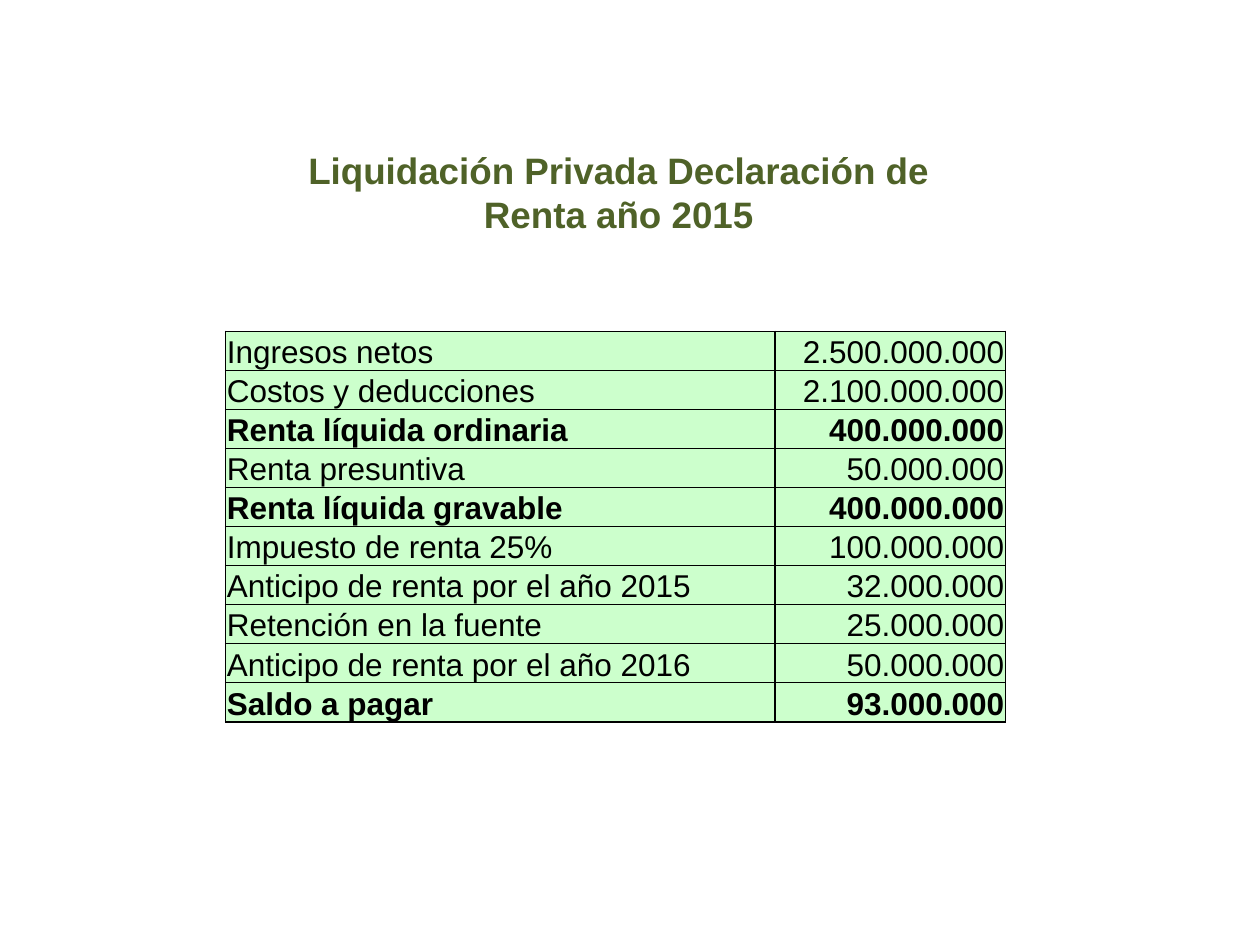
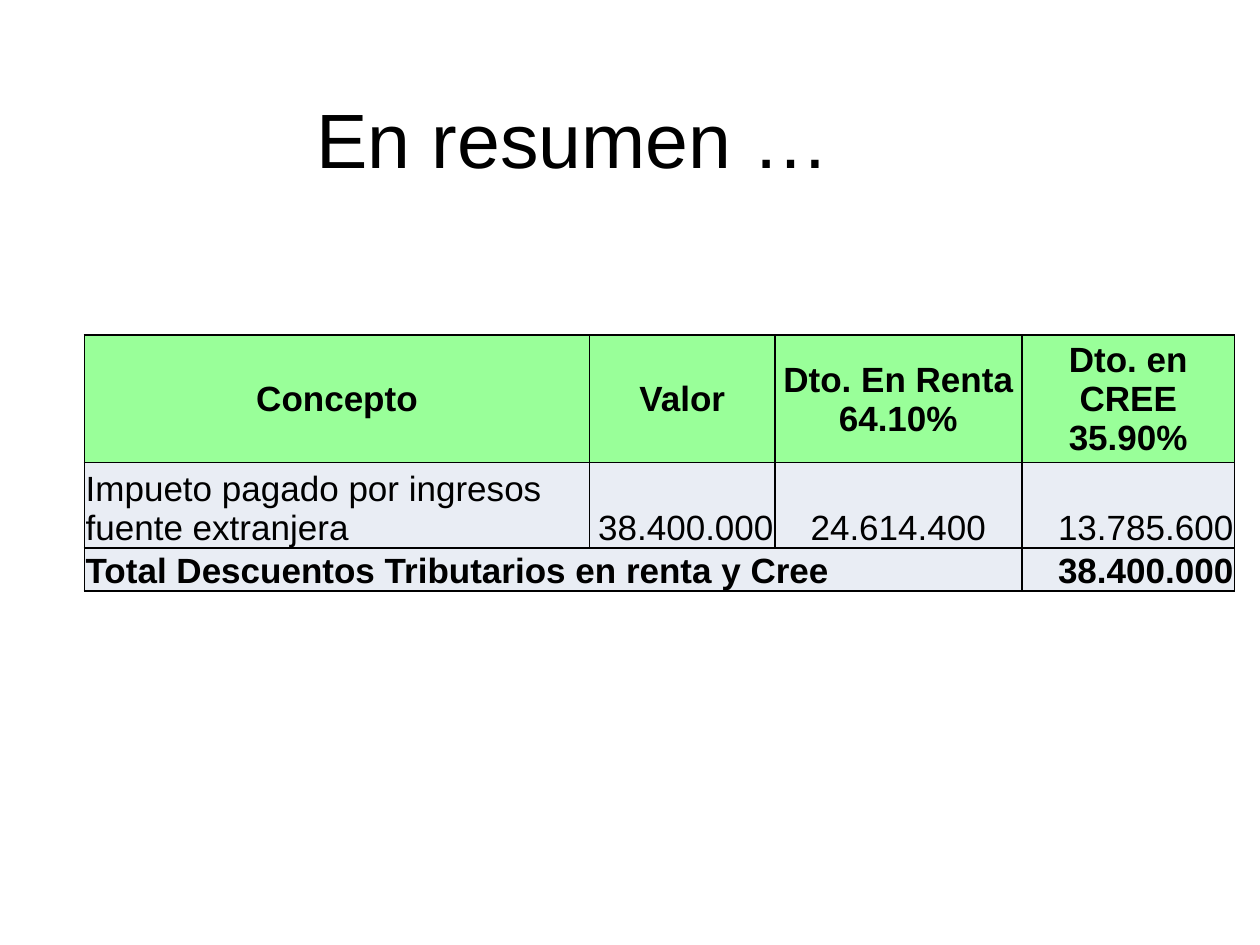
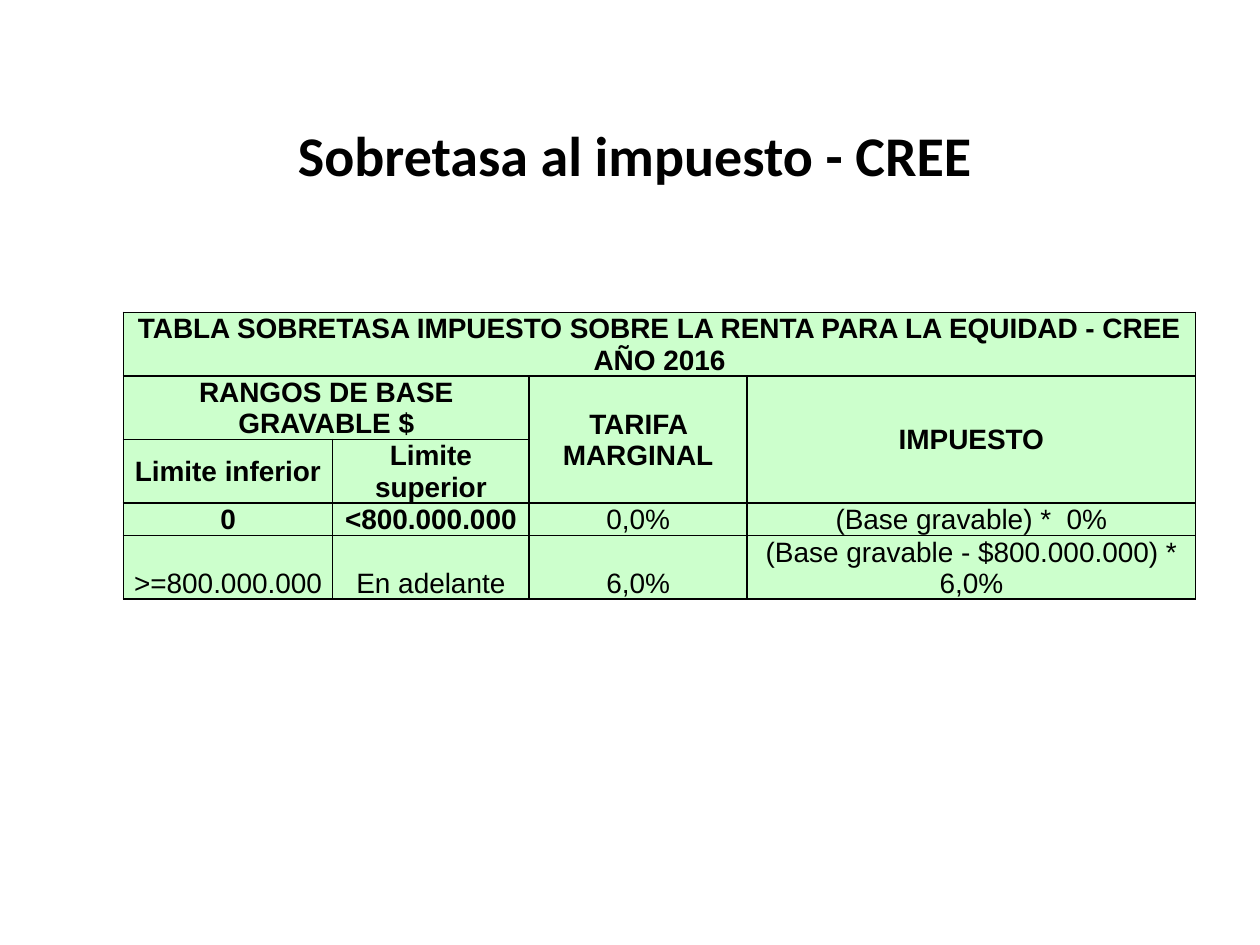
from dataclasses import dataclass

from lxml.etree import SubElement
from pptx import Presentation
from pptx.dml.color import RGBColor
from pptx.enum.text import MSO_ANCHOR, MSO_AUTO_SIZE, PP_ALIGN
from pptx.oxml.ns import qn
from pptx.util import Inches, Pt

LEFT, CENTER, RIGHT = PP_ALIGN.LEFT, PP_ALIGN.CENTER, PP_ALIGN.RIGHT
TOP, MIDDLE, BOTTOM = MSO_ANCHOR.TOP, MSO_ANCHOR.MIDDLE, MSO_ANCHOR.BOTTOM


@dataclass(frozen=True)
class Theme:
    ink: str = "000000"
    paper: str = "FFFFFF"
    olive: str = "4F6228"
    mint: str = "CCFFCC"
    green: str = "99FF99"
    mist: str = "E9EDF4"
    body_font: str = "Arial"
    heading_font: str = "Calibri"
    return_title: int = 21
    summary_title: int = 44
    surtax_title: int = 32
    return_body: int = 18
    summary_body: int = 20
    surtax_body: int = 16
    border: int = 1
    cell_inset: float = 0.01


@dataclass(frozen=True)
class Row:
    texts: tuple
    height: float
    fill: str
    aligns: tuple
    anchor: MSO_ANCHOR = BOTTOM
    bold_cells: int = 0


class Deck:
    def __init__(self, theme):
        self.theme = theme
        self.presentation = Presentation()
        self.presentation.slide_width = Inches(10)
        self.presentation.slide_height = Inches(7.5)
        self.slide = None

    def add_slide(self):
        title_only = self.presentation.slide_layouts[5]
        self.slide = self.presentation.slides.add_slide(title_only)

    def style(self, paragraph, size, bold, align, color=None, font=None):
        paragraph.alignment = align
        paragraph.font.name = font or self.theme.body_font
        paragraph.font.size = Pt(size)
        paragraph.font.bold = bold
        paragraph.font.color.rgb = RGBColor.from_string(color or self.theme.ink)

    def title(self, text, box, size, bold=True, align=CENTER, color=None,
              font=None, anchor=TOP, wrap=True, fill=None):
        heading = self.slide.shapes.title
        heading.left, heading.top, heading.width, heading.height = map(Inches, box)
        if fill:
            heading.fill.solid()
            heading.fill.fore_color.rgb = RGBColor.from_string(fill)
        frame = heading.text_frame
        frame.text = text
        frame.auto_size = MSO_AUTO_SIZE.NONE
        frame.word_wrap = wrap
        frame.vertical_anchor = anchor
        self.style(frame.paragraphs[0], size, bold, align, color, font)

    def outline(self, cell):
        properties = cell._tc.get_or_add_tcPr()
        for side in ("a:lnL", "a:lnR", "a:lnT", "a:lnB"):
            line = SubElement(properties, qn(side), w=str(Pt(self.theme.border)))
            solid = SubElement(line, qn("a:solidFill"))
            SubElement(solid, qn("a:srgbClr"), val=self.theme.ink)

    def table(self, left, top, widths, rows, size, merges=()):
        height = sum(row.height for row in rows)
        table = self.slide.shapes.add_table(
            len(rows), len(widths), Inches(left), Inches(top),
            Inches(sum(widths)), Inches(height)).table
        for column, width in zip(table.columns, widths):
            column.width = Inches(width)
        for index, row in enumerate(rows):
            table.rows[index].height = Inches(row.height)
            for position, text in enumerate(row.texts):
                cell = table.cell(index, position)
                self.outline(cell)
                cell.fill.solid()
                cell.fill.fore_color.rgb = RGBColor.from_string(row.fill)
                cell.margin_left = cell.margin_right = Inches(self.theme.cell_inset)
                cell.margin_top = Inches(self.theme.cell_inset)
                cell.margin_bottom = 0
                cell.vertical_anchor = row.anchor
                cell.text = text
                self.style(cell.text_frame.paragraphs[0], size,
                           position < row.bold_cells, row.aligns[position])
        for first, last in merges:
            table.cell(*first).merge(table.cell(*last))


def tax_return(deck):
    theme = deck.theme
    deck.add_slide()
    deck.title("Liquidación Privada Declaración de Renta año 2015",
               (1.95, 1.12, 5.92, 0.81), theme.return_title, color=theme.olive)
    amounts = (
        ("Ingresos netos", "2.500.000.000"),
        ("Costos y deducciones", "2.100.000.000"),
        ("Renta líquida ordinaria", "400.000.000"),
        ("Renta presuntiva", "50.000.000"),
        ("Renta líquida gravable", "400.000.000"),
        ("Impuesto de renta 25%", "100.000.000"),
        ("Anticipo de renta por el año 2015", "32.000.000"),
        ("Retención en la fuente", "25.000.000"),
        ("Anticipo de renta por el año 2016", "50.000.000"),
        ("Saldo a pagar", "93.000.000"),
    )
    totals = {"Renta líquida ordinaria", "Renta líquida gravable", "Saldo a pagar"}
    rows = [Row(entry, 0.31, theme.mint, (LEFT, RIGHT),
                bold_cells=2 if entry[0] in totals else 0) for entry in amounts]
    deck.table(1.79, 2.63, (4.36, 1.83), rows, theme.return_body)


def summary(deck):
    theme = deck.theme
    deck.add_slide()
    deck.title("En resumen …", (2.41, 0.68, 4.32, 0.84), theme.summary_title,
               bold=False, align=LEFT, wrap=False)
    aligns = (LEFT, RIGHT, CENTER, RIGHT)
    rows = (
        Row(("Concepto", "Valor", "Dto. En Renta 64.10%", "Dto. en CREE 35.90%"),
            1.01, theme.green, (CENTER,) * 4, MIDDLE, bold_cells=4),
        Row(("Impueto pagado por ingresos fuente extranjera",
             "38.400.000", "24.614.400", "13.785.600"), 0.68, theme.mist, aligns),
        Row(("Total Descuentos Tributarios en renta y Cree", "", "", "38.400.000"),
            0.34, theme.mist, aligns, bold_cells=4),
    )
    deck.table(0.67, 2.66, (4.01, 1.47, 1.96, 1.69), rows, theme.summary_body,
               merges=(((2, 0), (2, 2)),))


def surtax(deck):
    theme = deck.theme
    deck.add_slide()
    deck.title("Sobretasa al impuesto - CREE", (1.38, 0.99, 7.32, 0.47),
               theme.surtax_title, font=theme.heading_font, anchor=MIDDLE,
               fill=theme.paper)
    centered = (CENTER,) * 4
    headings = (
        ("TABLA SOBRETASA IMPUESTO SOBRE LA RENTA PARA LA EQUIDAD - CREE AÑO 2016",
         "", "", ""),
        ("RANGOS DE BASE GRAVABLE $", "", "TARIFA MARGINAL", "IMPUESTO"),
        ("Limite inferior", "Limite superior", "", ""),
    )
    rows = [Row(texts, 0.5, theme.mint, centered, MIDDLE, bold_cells=4)
            for texts in headings]
    rows += [
        Row(("0", "<800.000.000", "0,0%", "(Base gravable) *  0%"),
            0.26, theme.mint, centered, bold_cells=2),
        Row((">=800.000.000", "En adelante", "6,0%",
             "(Base gravable - $800.000.000) * 6,0%"), 0.5, theme.mint, centered),
    ]
    deck.table(0.98, 2.48, (1.66, 1.56, 1.73, 3.56), rows, theme.surtax_body,
               merges=(((0, 0), (0, 3)), ((1, 0), (1, 1)),
                       ((1, 2), (2, 2)), ((1, 3), (2, 3))))


def main():
    deck = Deck(Theme())
    for build in (tax_return, summary, surtax):
        build(deck)
    deck.presentation.save("out.pptx")


if __name__ == "__main__":
    main()
